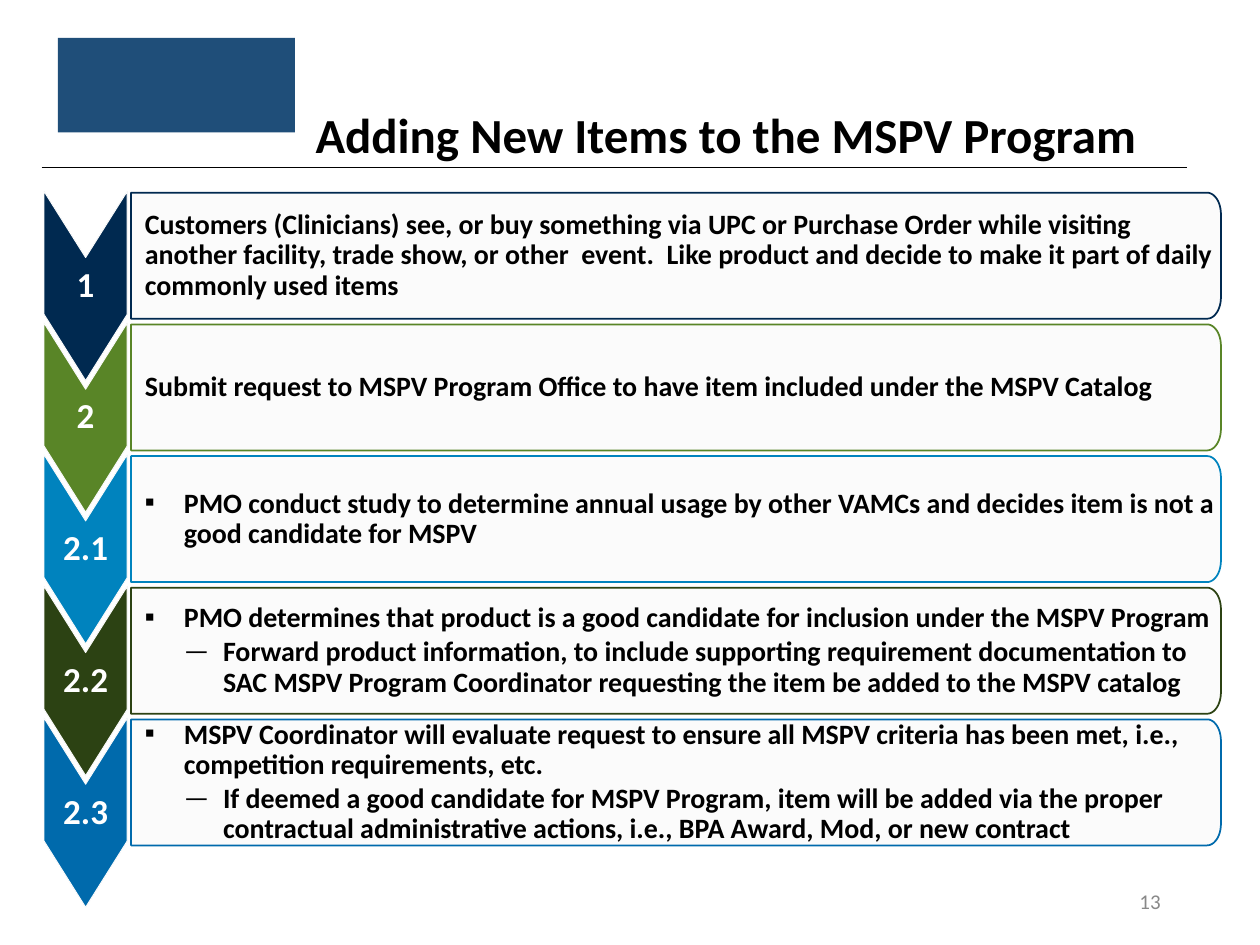
from math import cos, pi, sin

from lxml.etree import SubElement
from pptx import Presentation
from pptx.dml.color import RGBColor
from pptx.enum.shapes import MSO_CONNECTOR, MSO_SHAPE
from pptx.enum.text import MSO_ANCHOR as ANCHOR, MSO_AUTO_SIZE as AUTOSIZE, PP_ALIGN as ALIGN
from pptx.oxml.ns import qn
from pptx.util import Inches, Pt


def color(hex_string):
    return RGBColor.from_string(hex_string)


def add_text(paragraph, text, size, hex_color, bold=True):
    run = paragraph.add_run()
    run.text = text
    run.font.name = "Calibri"
    run.font.size = Pt(size)
    run.font.bold = bold
    run.font.color.rgb = color(hex_color)


prs = Presentation()
prs.slide_width, prs.slide_height = Inches(10), Inches(7.5)
slide = prs.slides.add_slide(prs.slide_layouts[5])
shapes = slide.shapes

# Plain block in the header corner
emblem = shapes.add_shape(MSO_SHAPE.RECTANGLE, Inches(0.46), Inches(0.3), Inches(1.88), Inches(0.75))
emblem.shadow.inherit = False
emblem.fill.solid()
emblem.fill.fore_color.rgb = color("1F4E79")
emblem.line.fill.background()

# Rule under the header
rule = shapes.add_connector(MSO_CONNECTOR.STRAIGHT, Inches(0.33), Inches(1.33), Inches(9.42), Inches(1.33))
rule.line.color.rgb = color("000000")
rule.line.width = Pt(1)
SubElement(rule._element.spPr, qn("a:effectLst"))

# Title
title = shapes.title
title.left, title.top, title.width, title.height = Inches(1.26), Inches(0.44), Inches(9), Inches(1.25)
frame = title.text_frame
frame.auto_size = AUTOSIZE.NONE
frame.word_wrap = True
frame.vertical_anchor = ANCHOR.MIDDLE
frame.margin_left = frame.margin_top = frame.margin_right = frame.margin_bottom = 0
frame.paragraphs[0].alignment = ALIGN.CENTER
frame.paragraphs[0].space_after = Pt(6)
add_text(frame.paragraphs[0], "Adding New Items to the MSPV Program", 28, "000000")

# Page number
page_number = shapes.add_textbox(Inches(7.06), Inches(6.95), Inches(2.25), Inches(0.4))
frame = page_number.text_frame
frame.word_wrap = True
frame.vertical_anchor = ANCHOR.MIDDLE
frame.paragraphs[0].alignment = ALIGN.RIGHT
add_text(frame.paragraphs[0], "13", 12, "898989", bold=False)

# Steps: label, colour, list of (bullet, text)
steps = [
    ("1", "002950", [
        ("", "Customers (Clinicians) see, or buy something via UPC or Purchase Order while visiting "
             "another facility, trade show, or other  event.  Like product and decide to make it "
             "part of daily commonly used items")]),
    ("2", "598527", [
        ("", "Submit request to MSPV Program Office to have item included under the MSPV Catalog")]),
    ("2.1", "0083BE", [
        ("▪", "PMO conduct study to determine annual usage by other VAMCs and decides item is not "
              "a good candidate for MSPV")]),
    ("2.2", "2C4213", [
        ("▪", "PMO determines that product is a good candidate for inclusion under the MSPV Program"),
        ("—", "Forward product information, to include supporting requirement documentation to "
              "SAC MSPV Program Coordinator requesting the item be added to the MSPV catalog")]),
    ("2.3", "006AAC", [
        ("▪", "MSPV Coordinator will evaluate request to ensure all MSPV criteria has been met, "
              "i.e., competition requirements, etc."),
        ("—", "If deemed a good candidate for MSPV Program, item will be added via the proper "
              "contractual administrative actions, i.e., BPA Award, Mod, or new contract")]),
]
first_top, pitch = 1.53, 1.045
box_left, box_right, box_height = 1.04, 9.69, 1.0
corner_w, corner_h = 0.11, 0.17
arrow_left, arrow_right, arrow_height, notch = 0.35, 1.01, 1.5, 0.525
arrow_middle = (arrow_left + arrow_right) / 2
indents = {"": 0, "▪": 0.31, "—": 0.62}
quarter = [pi / 2 * i / 12 for i in range(13)]

# Description boxes, rounded on the right
for row, (label, hue, lines) in enumerate(steps):
    top = first_top + row * pitch
    bottom = top + box_height
    center_x = box_right - corner_w
    upper = [(center_x + corner_w * sin(a), top + corner_h * (1 - cos(a))) for a in quarter]
    lower = [(center_x + corner_w * cos(a), bottom - corner_h * (1 - sin(a))) for a in quarter]
    outline = upper + lower + [(box_left, bottom)]
    builder = shapes.build_freeform(Inches(box_left), Inches(top))
    builder.add_line_segments([(Inches(x), Inches(y)) for x, y in outline], close=True)
    box = builder.convert_to_shape()
    box.shadow.inherit = False
    box.fill.solid()
    box.fill.fore_color.rgb = color("FBFBFB")
    fill_color = box._element.spPr.find(qn("a:solidFill")).find(qn("a:srgbClr"))
    SubElement(fill_color, qn("a:alpha"), val="90000")
    box.line.color.rgb = color(hue)
    box.line.width = Pt(1)

    frame = box.text_frame
    frame.word_wrap = True
    frame.vertical_anchor = ANCHOR.MIDDLE
    frame.margin_left = Inches(0.11)
    frame.margin_top = frame.margin_right = frame.margin_bottom = Inches(0.04)
    for i, (bullet, text) in enumerate(lines):
        paragraph = frame.add_paragraph() if i else frame.paragraphs[0]
        paragraph.level = i + 1
        paragraph.alignment = ALIGN.LEFT
        paragraph.line_spacing = 0.9
        paragraph.space_after = Pt(2.4)
        properties = paragraph._p.get_or_add_pPr()
        properties.set("marL", str(Inches(indents[bullet])))
        properties.set("indent", str(Inches(-0.31 if bullet else 0)))
        if bullet:
            SubElement(properties, qn("a:buFont"), typeface="Calibri")
            SubElement(properties, qn("a:buChar"), char=bullet)
        add_text(paragraph, text, 16, "000000")

# Numbered chevrons pointing down
for row, (label, hue, lines) in enumerate(steps):
    top = first_top - 0.01 + row * pitch
    bottom = top + arrow_height
    outline = [(arrow_right, bottom - notch), (arrow_middle, bottom), (arrow_left, bottom - notch),
               (arrow_left, top), (arrow_middle, top + notch)]
    builder = shapes.build_freeform(Inches(arrow_right), Inches(top))
    builder.add_line_segments([(Inches(x), Inches(y)) for x, y in outline], close=True)
    chevron = builder.convert_to_shape()
    chevron.shadow.inherit = False
    chevron.fill.solid()
    chevron.fill.fore_color.rgb = color(hue)
    chevron.line.color.rgb = color("FBFBFB")
    chevron.line.width = Pt(0.5)

    frame = chevron.text_frame
    frame.word_wrap = True
    frame.vertical_anchor = ANCHOR.MIDDLE
    frame.margin_left = frame.margin_right = Inches(0.01)
    frame.margin_top = frame.margin_bottom = Inches(0.34)
    paragraph = frame.paragraphs[0]
    paragraph.alignment = ALIGN.CENTER
    paragraph.line_spacing = 0.9
    paragraph.space_after = Pt(7)
    add_text(paragraph, label, 20, "FFFFFF")

prs.save("out.pptx")
